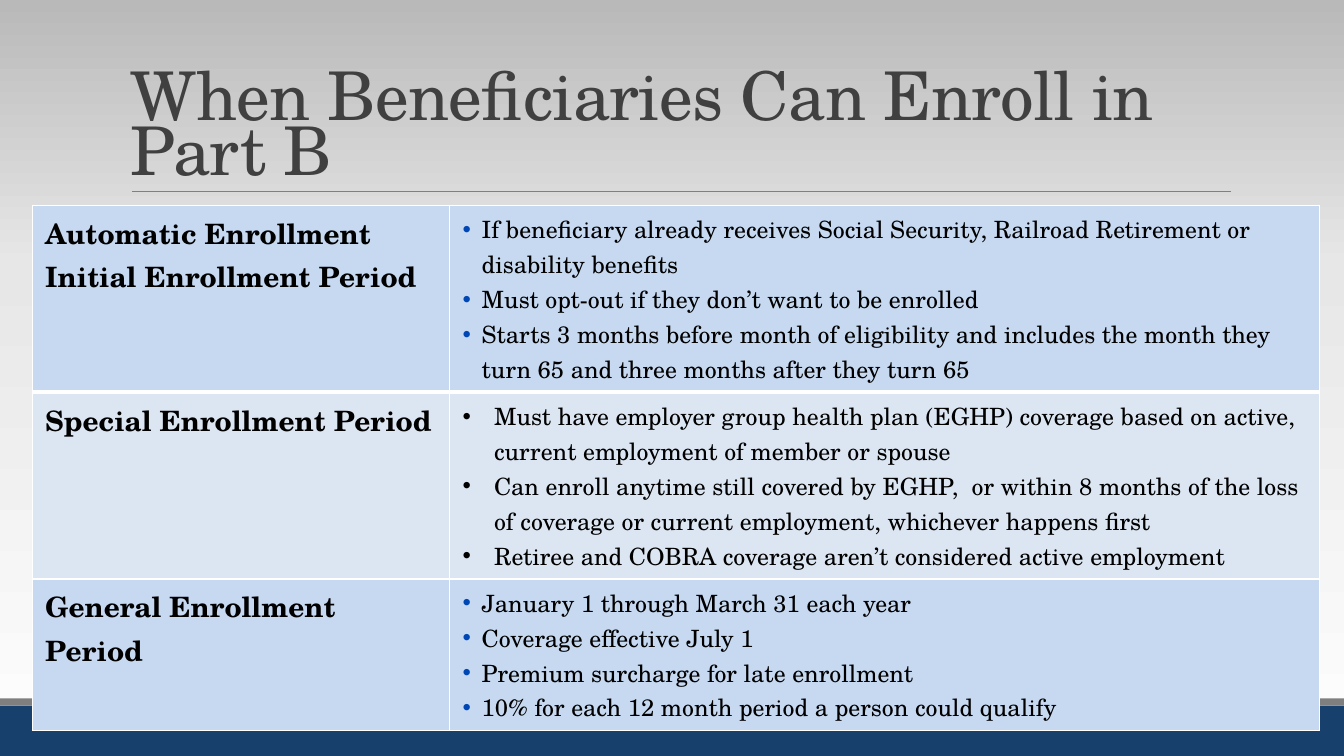
from copy import deepcopy

from pptx import Presentation
from pptx import util as u
from pptx.dml.color import RGBColor
from pptx.enum import shapes, text
from pptx.oxml.ns import qn
from lxml import etree

FONT = "TeX Gyre Schola"
BLUE, PALE = "C6D9F1", "DCE6F2"


def hue(code):
    return RGBColor.from_string(code)


def style(para, size, color, bold=False):
    font = para.font
    font.name, font.size, font.bold = FONT, u.Pt(size), bold
    font.color.rgb = hue(color)


deck = Presentation()
deck.slide_width, deck.slide_height = u.Cm(33.87), u.Cm(19.05)
page = deck.slides.add_slide(deck.slide_layouts[6])

# Background gradient, light at the bottom
back = page.background.fill
back.gradient()
back.gradient_angle = 90
last = list(page._element.iter(qn("a:gs")))[-1]
last.addnext(deepcopy(last))
for stop, (spot, code) in zip(
        back.gradient_stops, [(0, "FEFEFE"), (0.65, "E7E7E7"), (1, "B9B9B9")]):
    stop.position = spot
    stop.color.rgb = hue(code)

# Footer bands
for top, high, code in [(17.78, 1.27, "17406D"), (17.6, 0.18, "7F7F7F")]:
    band = page.shapes.add_shape(
        shapes.MSO_SHAPE.RECTANGLE, 0, u.Cm(top), deck.slide_width, u.Cm(high))
    band.shadow.inherit = False
    band.fill.solid()
    band.fill.fore_color.rgb = hue(code)
    band.line.fill.background()

# Rule under the title
rule = page.shapes.add_connector(
    shapes.MSO_CONNECTOR.STRAIGHT, u.Cm(3.33), u.Cm(4.82), u.Cm(31.01), u.Cm(4.82))
rule.line.color.rgb = hue("808080")
rule.line.width = u.Pt(0.5)
etree.SubElement(rule._element.spPr, qn("a:effectLst"))

# Enrollment table: heading, bullets, fill, indent, bullet colour, height
rows = [
    (["Automatic Enrollment", "Initial Enrollment Period"],
     ["If beneficiary already receives Social Security, Railroad Retirement or disability benefits",
      "Must opt-out if they don’t want to be enrolled",
      "Starts 3 months before month of eligibility and includes the month they "
      "turn 65 and three months after they turn 65"],
     BLUE, 0.48, "0047B6", 4.17),
    (["Special Enrollment Period"],
     ["Must have employer group health plan (EGHP) coverage based on active, "
      "current employment of member or spouse",
      "Can enroll anytime still covered by EGHP,  or within 8 months of the loss "
      "of coverage or current employment, whichever happens first",
      "Retiree and COBRA coverage aren’t considered active employment"],
     PALE, 0.79, "000000", 4.0),
    (["General Enrollment Period"],
     ["January 1 through March 31 each year",
      "Coverage effective July 1",
      "Premium surcharge for late enrollment",
      "10% for each 12 month period a person could qualify"],
     BLUE, 0.48, "0047B6", 3.26),
]
table = page.shapes.add_table(
    3, 2, u.Cm(0.81), u.Cm(5.18), u.Cm(32.44), u.Cm(11.43)).table
table.first_row = table.horz_banding = False
for col, wide in zip(table.columns, [10.52, 21.92]):
    col.width = u.Cm(wide)

for i, (heads, items, fill, dent, dot, high) in enumerate(rows):
    table.rows[i].height = u.Cm(high)
    for j, lines in enumerate([heads, items]):
        cell = table.cell(i, j)
        cell.margin_left = cell.margin_right = u.Cm(0.33)
        cell.margin_top = cell.margin_bottom = u.Cm(0.15)
        cell.fill.solid()
        cell.fill.fore_color.rgb = hue(fill)

        # White borders, thick between the first two rows
        thick = {0: "lnB", 1: "lnT"}.get(i)
        for k, side in enumerate(["lnL", "lnR", "lnT", "lnB"]):
            edge = etree.Element(qn("a:" + side), w=str(u.Pt(3 if side == thick else 1)))
            paint = etree.SubElement(edge, qn("a:solidFill"))
            etree.SubElement(paint, qn("a:srgbClr"), val="FFFFFF")
            cell._tc.get_or_add_tcPr().insert(k, edge)

        cell.text = "\n".join(lines)
        for para in cell.text_frame.paragraphs:
            if j == 1:
                props = para._p.get_or_add_pPr()
                props.set("marL", str(u.Cm(dent)))
                props.set("indent", str(-u.Cm(dent)))
                tint = etree.SubElement(props, qn("a:buClr"))
                etree.SubElement(tint, qn("a:srgbClr"), val=dot)
                etree.SubElement(props, qn("a:buFont"), typeface="Arial")
                etree.SubElement(props, qn("a:buChar"), char="•")
            style(para, 17 if j else 20, "000000", j == 0)

# Title
frame = page.shapes.add_textbox(
    u.Cm(3.05), u.Cm(0.79), u.Cm(27.94), u.Cm(4.04)).text_frame
frame.word_wrap = True
frame.vertical_anchor = text.MSO_ANCHOR.BOTTOM
title = frame.paragraphs[0]
title.text = "When Beneficiaries Can Enroll in Part B"
title.line_spacing = 0.68
style(title, 48, "404040")
title.font._element.set("spc", "-50")

deck.save("out.pptx")
